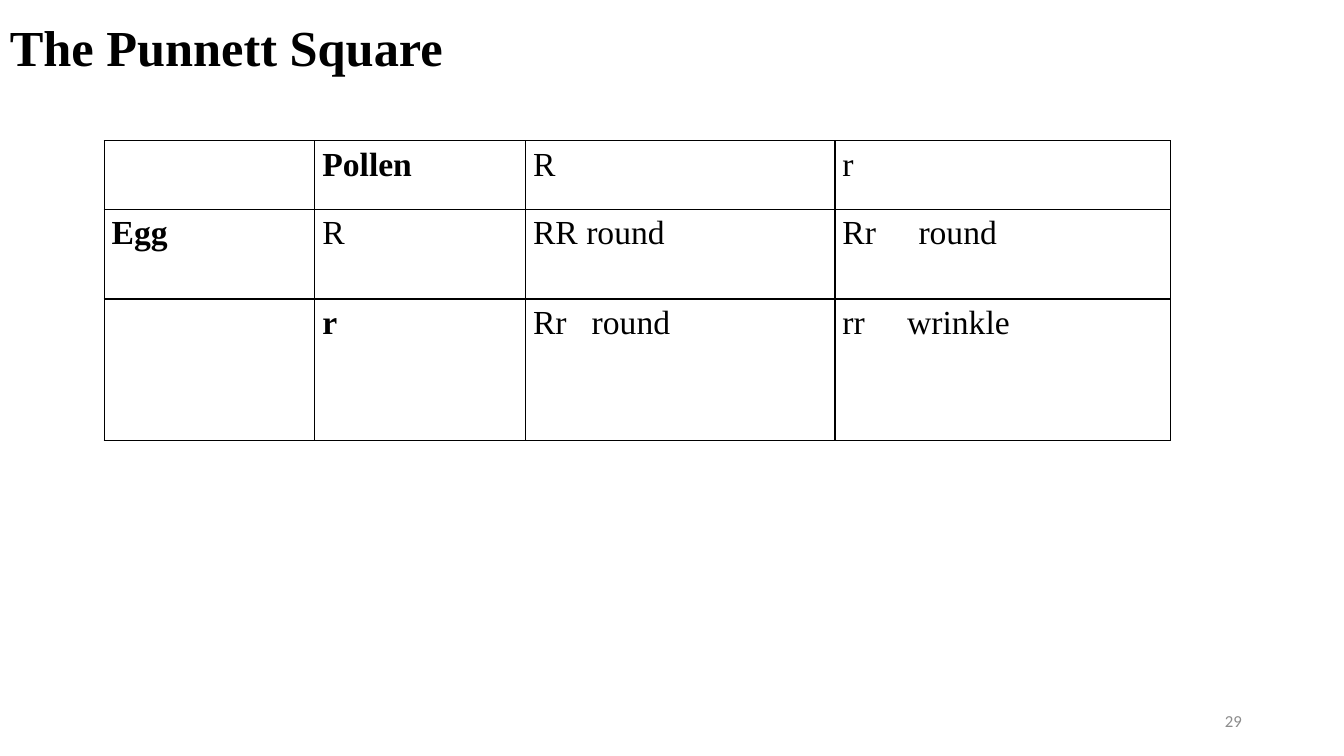
from dataclasses import dataclass

from lxml.etree import SubElement
from pptx import Presentation
from pptx.dml.color import RGBColor
from pptx.enum.text import MSO_ANCHOR as Anchor, PP_ALIGN as Align
from pptx.oxml.ns import qn
from pptx.util import Pt

COLORS = {"ink": "000000", "number": "8C8C8C"}
SERIF = "Times New Roman"
COLUMN_WIDTHS = (150.5, 150.5, 221, 240)
ROW_HEIGHTS = (49, 64, 101)


@dataclass(frozen=True)
class Entry:
    text: str = ""
    bold: bool = False
    tab: float = 0


@dataclass(frozen=True)
class Label:
    text: str
    left: float
    top: float
    width: float
    height: float
    size: float
    font: str
    color: str
    bold: bool = False
    align: Align = Align.LEFT
    anchor: Anchor = Anchor.MIDDLE
    inset_top: float = 3.6
    wrap: bool = True


PUNNETT_SQUARE = (
    (Entry(), Entry("Pollen", bold=True), Entry("R"), Entry("r")),
    (Entry("Egg", bold=True), Entry("R"), Entry("RR round"),
     Entry("Rr\tround", tab=54.3)),
    (Entry(), Entry("r", bold=True), Entry("Rr\tround", tab=41.9),
     Entry("rr\twrinkle", tab=46.2)),
)
LABELS = (
    Label("29", 678.2, 500.4, 216, 28.8, size=12, font="Calibri",
          color="number", align=Align.RIGHT),
    Label("The Punnett Square", 0, 0, 327, 76.3, size=36, font=SERIF,
          color="ink", bold=True, anchor=Anchor.TOP, inset_top=11.5, wrap=False),
)


def write_text(frame, text: str, *, size: float, font: str, color: str,
               bold: bool = False, align: Align = Align.LEFT,
               line_spacing: float = 1, space_after: float = 0, tab: float = 0) -> None:
    paragraph = frame.paragraphs[0]
    paragraph.alignment = align
    paragraph.line_spacing = line_spacing
    paragraph.space_after = Pt(space_after)
    if tab:
        stops = SubElement(paragraph._p.get_or_add_pPr(), qn("a:tabLst"))
        SubElement(stops, qn("a:tab"), pos=str(Pt(tab)), algn="l")
    run = paragraph.add_run()
    run.text = text
    run.font.size = Pt(size)
    run.font.name = font
    run.font.bold = bold
    run.font.color.rgb = RGBColor.from_string(COLORS[color])


def draw_label(slide, label: Label) -> None:
    box = slide.shapes.add_textbox(Pt(label.left), Pt(label.top),
                                   Pt(label.width), Pt(label.height))
    frame = box.text_frame
    frame.word_wrap = label.wrap
    frame.vertical_anchor = label.anchor
    frame.margin_top = Pt(label.inset_top)
    write_text(frame, label.text, size=label.size, font=label.font,
               color=label.color, bold=label.bold, align=label.align)


def outline_cell(cell) -> None:
    properties = cell._tc.get_or_add_tcPr()
    for side in ("lnL", "lnR", "lnT", "lnB"):
        border = SubElement(properties, qn(f"a:{side}"), w=str(Pt(1)))
        fill = SubElement(border, qn("a:solidFill"))
        SubElement(fill, qn("a:srgbClr"), val=COLORS["ink"])


def draw_entry(cell, entry: Entry) -> None:
    cell.margin_left = cell.margin_right = Pt(5.4)
    cell.margin_top = cell.margin_bottom = 0
    outline_cell(cell)
    cell.fill.background()
    if entry.text:
        write_text(cell.text_frame, entry.text, size=24, font=SERIF, color="ink",
                   bold=entry.bold, align=Align.JUSTIFY, line_spacing=1.15,
                   space_after=10, tab=entry.tab)


def draw_punnett_square(slide) -> None:
    table = slide.shapes.add_table(
        len(ROW_HEIGHTS), len(COLUMN_WIDTHS), Pt(74.4), Pt(100.6),
        Pt(sum(COLUMN_WIDTHS)), Pt(sum(ROW_HEIGHTS))).table
    table.first_row = table.horz_banding = False
    for column, width in zip(table.columns, COLUMN_WIDTHS):
        column.width = Pt(width)
    for row, height, entries in zip(table.rows, ROW_HEIGHTS, PUNNETT_SQUARE):
        row.height = Pt(height)
        for cell, entry in zip(row.cells, entries):
            draw_entry(cell, entry)


def main() -> None:
    deck = Presentation()
    deck.slide_width, deck.slide_height = Pt(960), Pt(540)
    slide = deck.slides.add_slide(deck.slide_layouts[6])
    draw_punnett_square(slide)
    for label in LABELS:
        draw_label(slide, label)
    deck.save("out.pptx")


if __name__ == "__main__":
    main()
